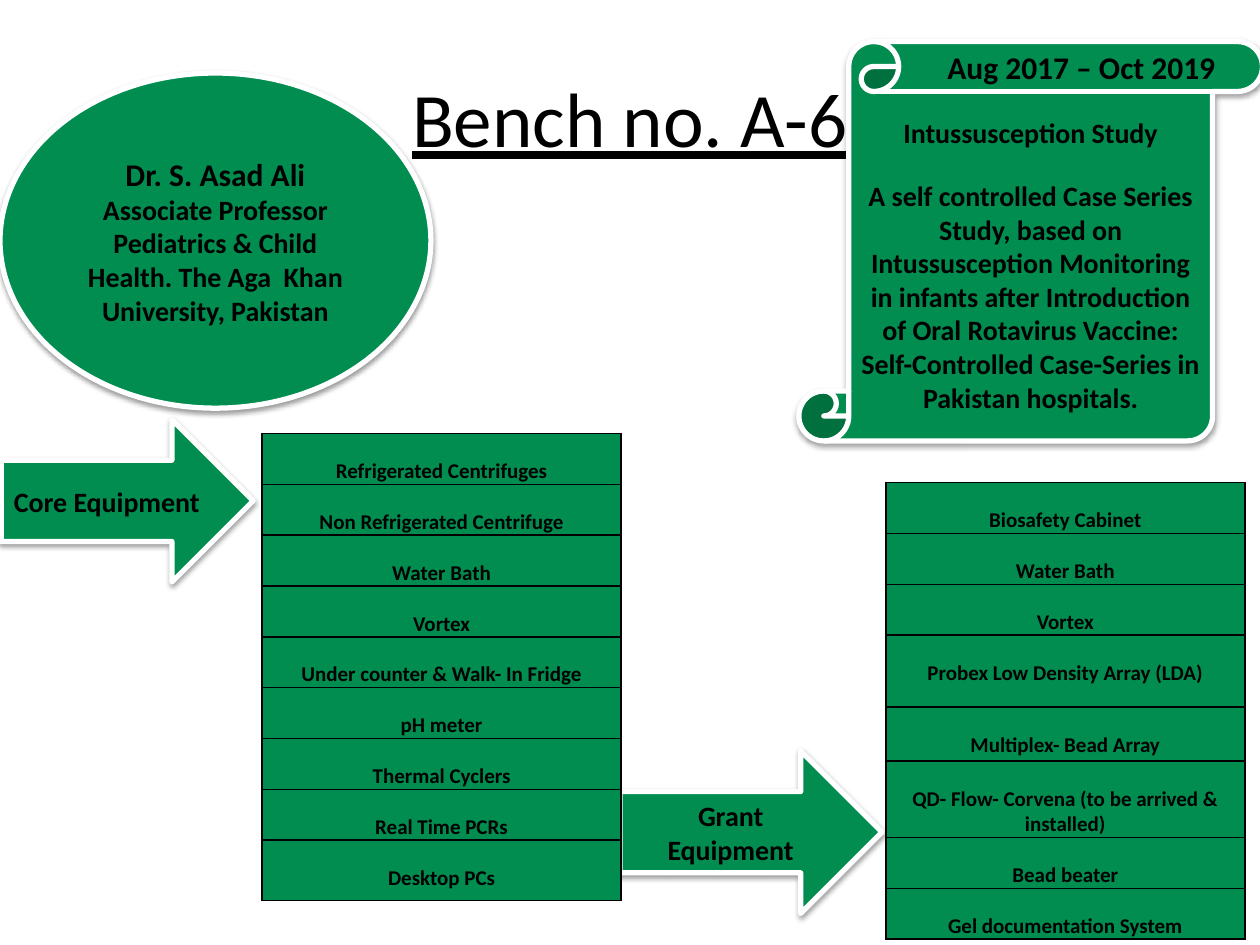
from lxml.etree import SubElement
from pptx import Presentation
from pptx.dml.color import RGBColor
from pptx.enum.shapes import MSO_SHAPE
from pptx.enum.text import MSO_ANCHOR, PP_ALIGN
from pptx.oxml.ns import qn
from pptx.util import Inches, Pt

GREEN, BLACK, WHITE = "008D4F", "000000", "FFFFFF"


def color(hex_code):
    return RGBColor.from_string(hex_code)


def add_element(parent, tag, **attributes):
    return SubElement(parent, qn(tag), {key: str(value) for key, value in attributes.items()})


class BenchSlide:
    font = "Calibri"

    def __init__(self, deck):
        self.page = deck.slides.add_slide(deck.slide_layouts[5])

    def set_text(self, para, text, size, bold=True, underline=None, align=PP_ALIGN.CENTER):
        para.text = text
        para.alignment = align
        for span in para.runs:
            span.font.name = self.font
            span.font.size = Pt(size)
            span.font.bold = bold
            span.font.underline = underline
            span.font.color.rgb = color(BLACK)

    def title(self, text, left, top, width, height):
        box = self.page.shapes.title
        box.left, box.top, box.width, box.height = map(Inches, (left, top, width, height))
        box.text_frame.vertical_anchor = MSO_ANCHOR.MIDDLE
        self.set_text(box.text_frame.paragraphs[0], text, 44, bold=False, underline=True)

    def shape(self, preset, left, top, width, height, lines):
        """Add a green shape; lines holds (text, size, space before) for each paragraph."""
        shape = self.page.shapes.add_shape(preset, *map(Inches, (left, top, width, height)))
        shape.fill.solid()
        shape.fill.fore_color.rgb = color(GREEN)
        shape.line.color.rgb = color(WHITE)
        shape.line.width = Pt(3)
        self.soft_shadow(shape)
        frame = shape.text_frame
        frame.word_wrap = True
        frame.vertical_anchor = MSO_ANCHOR.MIDDLE
        for index, (text, size, space) in enumerate(lines):
            para = frame.add_paragraph() if index else frame.paragraphs[0]
            self.set_text(para, text, size)
            para.space_before = Pt(space)
        return shape

    def soft_shadow(self, shape):
        shape.shadow.inherit = False
        effects = shape._element.spPr.find(qn("a:effectLst"))
        shadow = add_element(effects, "a:outerShdw", blurRad=Pt(3.1), dist=Pt(1.6),
                             dir=90 * 60000, rotWithShape=0)
        tint = add_element(shadow, "a:srgbClr", val=BLACK)
        add_element(tint, "a:alpha", val=38000)

    def label(self, text, left, top, width, height, size):
        box = self.page.shapes.add_textbox(*map(Inches, (left, top, width, height)))
        box.text_frame.word_wrap = True
        self.set_text(box.text_frame.paragraphs[0], text, size, align=PP_ALIGN.LEFT)

    def equipment_table(self, left, top, width, items):
        """Add a one-column table; items holds (text, row height)."""
        total = sum(height for _, height in items)
        frame = self.page.shapes.add_table(len(items), 1, *map(Inches, (left, top, width, total)))
        table = frame.table
        table.first_row = table.horz_banding = False
        for index, (text, height) in enumerate(items):
            table.rows[index].height = Inches(height)
            cell = table.cell(index, 0)
            cell.margin_left = cell.margin_right = Inches(0.07)
            cell.margin_top, cell.margin_bottom = Inches(0.2), 0
            self.set_text(cell.text_frame.paragraphs[0], text, 12)
            self.cell_borders(cell)
            cell.fill.solid()
            cell.fill.fore_color.rgb = color(GREEN)

    def cell_borders(self, cell):
        properties = cell._tc.get_or_add_tcPr()
        for side in ("a:lnL", "a:lnR", "a:lnT", "a:lnB"):
            line = add_element(properties, side, w=Pt(1))
            add_element(add_element(line, "a:solidFill"), "a:srgbClr", val=BLACK)


def main():
    deck = Presentation()
    deck.slide_width, deck.slide_height = Inches(10), Inches(7.5)
    slide = BenchSlide(deck)

    slide.title("Bench no. A-6", 0.5, 0.3, 9, 1.25)
    slide.shape(MSO_SHAPE.OVAL, 0, 0.58, 3.42, 2.66, [
        ("Dr. S. Asad Ali", 18, 3.6),
        ("Associate Professor Pediatrics & Child Health. The Aga  Khan University, Pakistan", 16, 0),
    ])
    scroll = slide.shape(MSO_SHAPE.VERTICAL_SCROLL, 6.34, 0.33, 3.68, 3.17, [
        ("Intussusception Study", 16, 0),
        ("A self controlled Case Series Study, based on Intussusception Monitoring in infants "
         "after Introduction of Oral Rotavirus Vaccine: Self-Controlled Case-Series in "
         "Pakistan hospitals.", 16, 17),
    ])
    scroll.text_frame.margin_top = Inches(0.22)
    slide.shape(MSO_SHAPE.RIGHT_ARROW, 0.01, 3.33, 2, 1.29, [("Core Equipment", 16, 0)])
    slide.shape(MSO_SHAPE.RIGHT_ARROW, 4.92, 5.96, 2.08, 1.29, [("Grant Equipment", 16, 0)])

    core_names = ["Refrigerated Centrifuges", "Non Refrigerated Centrifuge", "Water Bath",
                  "Vortex", "Under counter & Walk- In Fridge", "pH meter", "Thermal Cyclers",
                  "Real Time PCRs"]
    core_items = [(name, 0.39) for name in core_names] + [("Desktop PCs", 0.48)]
    slide.equipment_table(2.08, 3.44, 2.85, core_items)
    slide.equipment_table(7.03, 3.83, 2.85, [
        ("Biosafety Cabinet", 0.38),
        ("Water Bath", 0.38),
        ("Vortex", 0.38),
        ("Probex Low Density Array (LDA)", 0.57),
        ("Multiplex- Bead Array", 0.43),
        ("QD- Flow- Corvena (to be arrived & installed)", 0.57),
        ("Bead beater", 0.38),
        ("Gel documentation System", 0.38),
    ])
    slide.label("Aug 2017 – Oct 2019", 7.42, 0.33, 2.42, 0.4, 18)

    deck.save("out.pptx")


if __name__ == "__main__":
    main()
